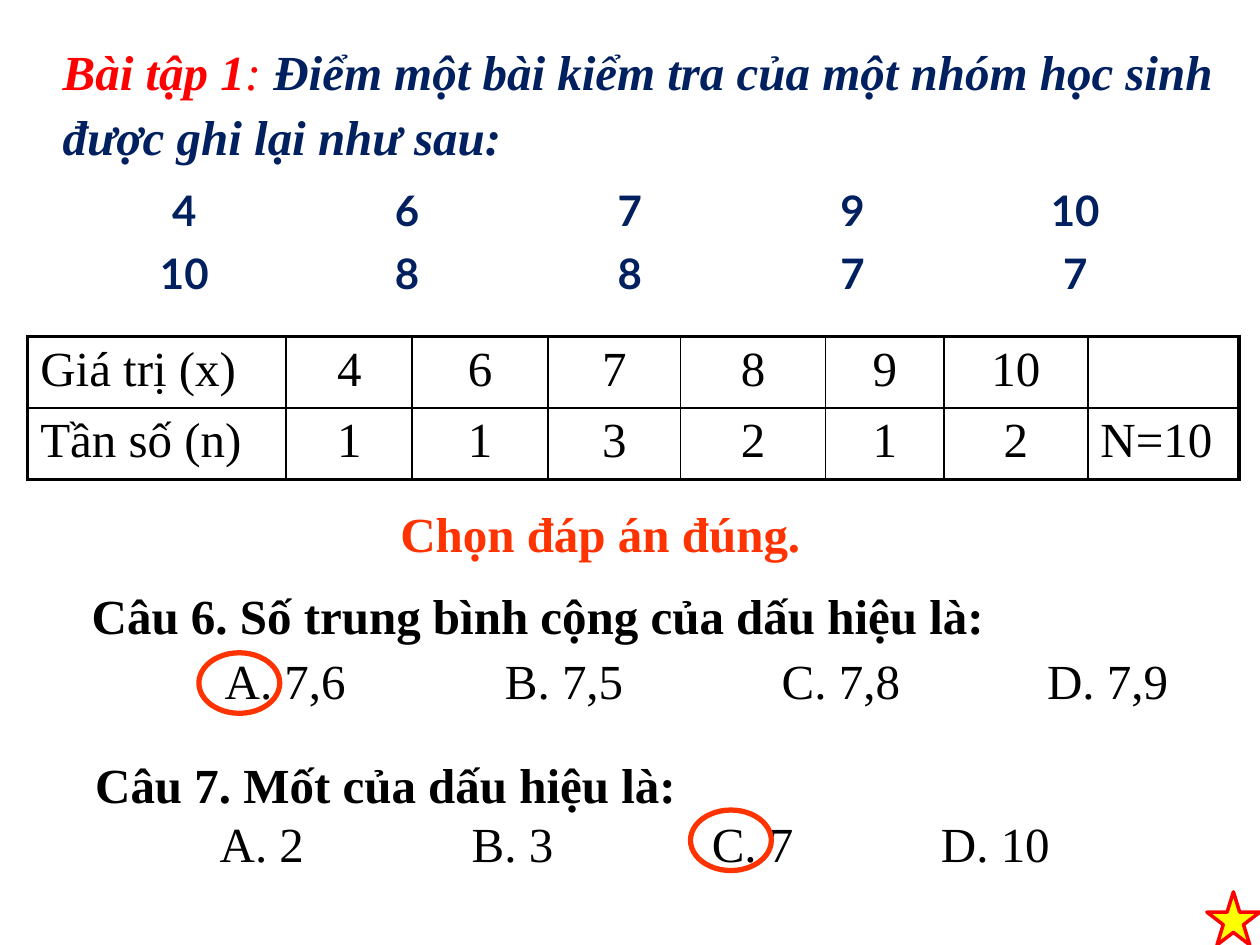
from lxml.etree import SubElement
from pptx import Presentation
from pptx.dml.color import RGBColor
from pptx.enum.shapes import MSO_SHAPE
from pptx.enum.text import MSO_ANCHOR, MSO_AUTO_SIZE, PP_ALIGN
from pptx.oxml.ns import qn
from pptx.util import Cm, Pt

NAVY, RED, ORANGE, BLACK, YELLOW = "002060", "FF0000", "FF3300", "000000", "FFFF00"
rgb = RGBColor.from_string


def style(span, color, bold=False, italic=False, size=28, name="Times New Roman"):
    font = span.font
    font.name, font.size, font.bold, font.italic = name, Pt(size), bold, italic
    font.color.rgb = rgb(color)


def add_grid(rows, left, top, widths, height, **look):
    """Add an unfilled table; digits are centred, other text stays left."""
    frame = slide.shapes.add_table(len(rows), len(widths), Cm(left), Cm(top),
                                   Cm(sum(widths)), Cm(height * len(rows)))
    table = frame.table
    table.first_row = table.horz_banding = False
    for column, width in zip(table.columns, widths):
        column.width = Cm(width)
    for row, values in zip(table.rows, rows):
        row.height = Cm(height)
        for cell, value in zip(row.cells, values):
            cell.fill.background()
            para = cell.text_frame.paragraphs[0]
            para.text = value
            para.alignment = PP_ALIGN.CENTER if value.isdigit() else PP_ALIGN.LEFT
            style(para if not para.runs else para.runs[0], **look)
    return table


deck = Presentation()
deck.slide_width, deck.slide_height = Cm(25.4), Cm(19.05)
slide = deck.slides.add_slide(deck.slide_layouts[5])

# Exercise statement
title = slide.shapes.title
title.left, title.top, title.width, title.height = Cm(0.76), Cm(0.84), Cm(24.2), Cm(2.34)
frame = title.text_frame
frame.word_wrap = True
frame.auto_size = MSO_AUTO_SIZE.NONE
frame.vertical_anchor = MSO_ANCHOR.TOP
statement = [
    [("Bài tập 1", RED, True), (": ", RED, False),
     ("Điểm một bài kiểm tra của một nhóm học sinh", NAVY, True)],
    [("được ghi lại như sau:", NAVY, True)],
]
for index, spans in enumerate(statement):
    para = frame.add_paragraph() if index else frame.paragraphs[0]
    para.alignment = PP_ALIGN.LEFT
    para.line_spacing = 0.9
    para.space_before = Pt(7 if index else 0)
    for text, color, bold in spans:
        span = para.add_run()
        span.text = text
        style(span, color, bold, italic=True)
frame.paragraphs[0]._p.get_or_add_pPr().set("marL", str(Cm(0.25)))

# Raw scores
scores = [["4", "6", "7", "9", "10"], ["10", "8", "8", "7", "7"]]
add_grid(scores, 1.47, 3.61, [4.49] * 5, 1.27,
         color=NAVY, bold=True, size=24, name="Lato")

# Instruction and questions: box, line spacing, paragraphs (text, colour, bold, indent, tabs)
blocks = [
    ((6.55, 10.16, 9.93, 1.27), 0.9, 0,
     [("Chọn đáp án đúng.", ORANGE, True, 1.27, [])]),
    ((0.08, 11.81, 24.97, 2.54), 0.9, 7,
     [("Câu 6. Số trung bình cộng của dấu hiệu là:", BLACK, True, 1.52, []),
      ("\tA. 7,6\tB. 7,5\tC. 7,8\tD. 7,9", BLACK, False, 0, [4.2, 9.85, 15.43, 20.78])]),
    ((0.15, 15.09, 26.19, 2.64), 1.0, 0,
     [("Câu 7. Mốt của dấu hiệu là:", BLACK, True, 1.52, []),
      ("\tA. 2\tB. 3\tC. 7\tD. 10", BLACK, False, 0, [4.03, 9.11, 13.95, 18.57])]),
]
for place, spacing, gap, lines in blocks:
    box = slide.shapes.add_textbox(*map(Cm, place))
    frame = box.text_frame
    frame.word_wrap = True
    for index, (text, color, bold, indent, tabs) in enumerate(lines):
        para = frame.add_paragraph() if index else frame.paragraphs[0]
        para.text = text
        para.line_spacing = spacing
        para.space_before = Pt(gap if index else 0)
        for span in para.runs:
            style(span, color, bold)
        properties = para._p.get_or_add_pPr()
        properties.set("marL", str(Cm(indent)))
        if tabs:
            stops = SubElement(properties, qn("a:tabLst"))
            for tab in tabs:
                SubElement(stops, qn("a:tab"), pos=str(Cm(tab)), algn="l")

# Frequency table with a heavier outer frame
frequencies = [
    ["Giá trị (x)", "4", "6", "7", "8", "9", "10", ""],
    ["Tần số (n)", "1", "1", "3", "2", "1", "2", "N=10"],
]
widths = [5.21, 2.54, 2.74, 2.67, 2.92, 2.39, 2.9, 3.05]
table = add_grid(frequencies, 0.56, 6.78, widths, 1.43, color=BLACK)
last_row, last_column = len(frequencies) - 1, len(widths) - 1
for r, row in enumerate(table.rows):
    for c, cell in enumerate(row.cells):
        outer = {"a:lnL": c == 0, "a:lnR": c == last_column,
                 "a:lnT": r == 0, "a:lnB": r == last_row}
        properties = cell._tc.get_or_add_tcPr()
        for position, (side, is_outer) in enumerate(outer.items()):
            line = SubElement(properties, qn(side), w=str(Pt(2.25 if is_outer else 1)))
            fill = SubElement(line, qn("a:solidFill"))
            SubElement(fill, qn("a:srgbClr"), val=BLACK)
            properties.insert(position, line)

# Rings around the right answers, and the corner star
marks = [
    (MSO_SHAPE.OVAL, (4.01, 13.16, 1.63, 1.22), None, ORANGE, 3),
    (MSO_SHAPE.OVAL, (13.92, 16.33, 1.63, 1.22), None, ORANGE, 3),
    (MSO_SHAPE.STAR_5_POINT, (24.33, 17.98, 1.07, 1.07), YELLOW, RED, 2),
]
for kind, place, fill, outline, weight in marks:
    mark = slide.shapes.add_shape(kind, *map(Cm, place))
    mark.shadow.inherit = False
    if fill:
        mark.fill.solid()
        mark.fill.fore_color.rgb = rgb(fill)
    else:
        mark.fill.background()
    mark.line.color.rgb = rgb(outline)
    mark.line.width = Pt(weight)

deck.save("out.pptx")
